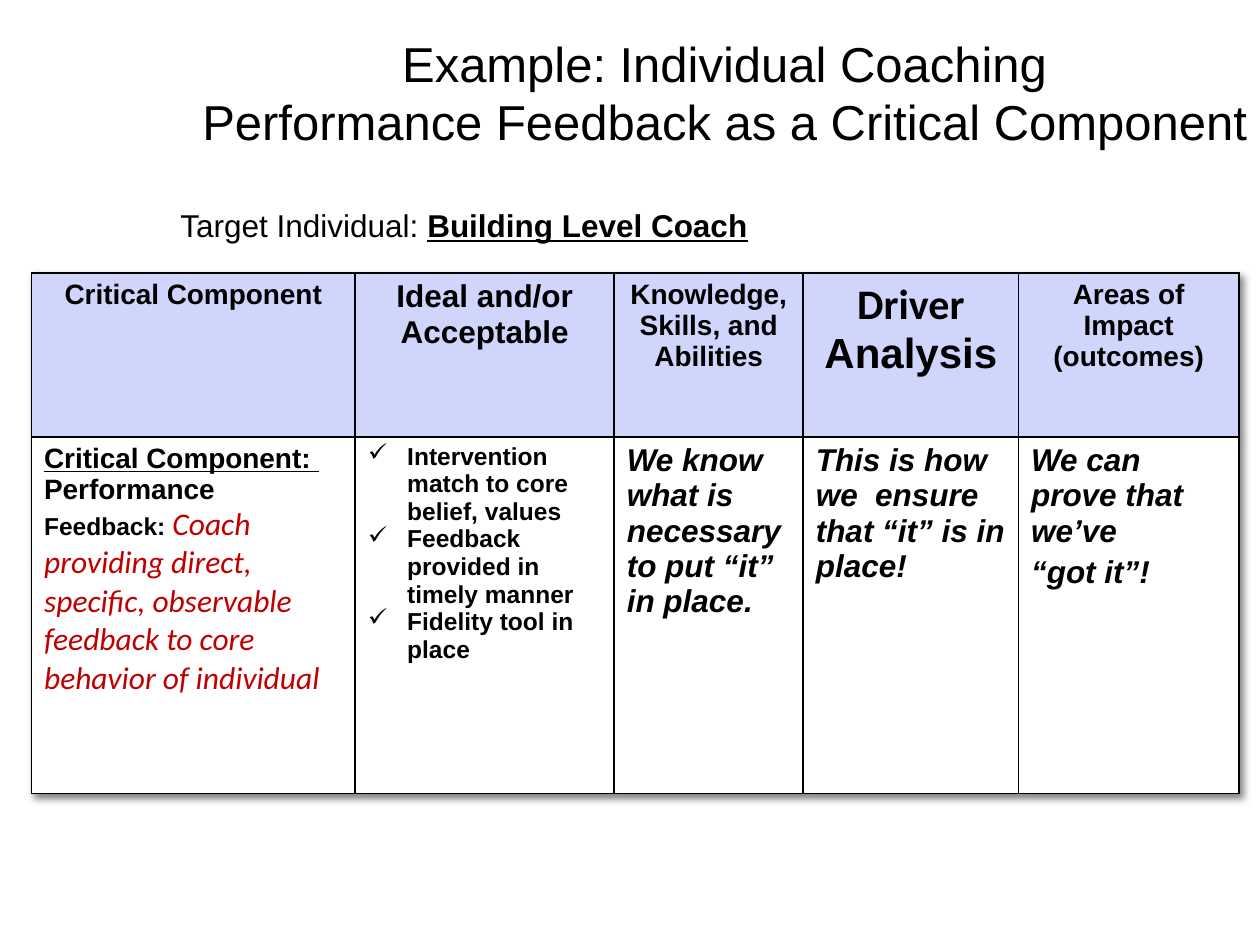
from dataclasses import dataclass

from lxml import etree
from pptx import Presentation
from pptx.dml.color import RGBColor
from pptx.enum import text as t
from pptx.oxml import ns
from pptx.util import Pt

BLACK = RGBColor(0x00, 0x00, 0x00)
WHITE = RGBColor(0xFF, 0xFF, 0xFF)
LAVENDER = RGBColor(0xD0, 0xD5, 0xFC)
RED = RGBColor(0xC0, 0x00, 0x00)

COLUMN_WIDTHS = (185, 148, 108, 123, 126)
ROW_HEIGHTS = (93.6, 203.8)


@dataclass
class Words:
    """A stretch of text in one format."""
    text: str
    size: float
    bold: bool = True
    italic: bool = False
    underline: bool = False
    face: str = "Arial"
    color: RGBColor = BLACK


HEADINGS = (
    [[Words("Critical Component", 16)]],
    [[Words("Ideal and/or Acceptable", 18)]],
    [[Words("Knowledge, Skills, and Abilities", 16)]],
    [[Words("Driver", 24, face="Calibri")], [Words("Analysis", 24)]],
    [[Words(line, 16)] for line in ("Areas of", "Impact", "(outcomes)")],
)
COMPONENT = [
    [Words("Critical Component: ", 16, underline=True)],
    [Words("Performance ", 16), Words("Feedback: ", 14),
     Words("Coach providing direct, specific, observable feedback to core "
           "behavior of individual", 18, bold=False, italic=True,
           face="Calibri", color=RED)],
]
PRACTICES = [[Words(line, 14)] for line in (
    "Intervention match to core belief, values",
    "Feedback provided in timely manner",
    "Fidelity tool in place",
)]
STATEMENTS = [[[Words(line, 18, italic=True)] for line in lines] for lines in (
    ["We know what is necessary to put “it” in place."],
    ["This is how we  ensure that “it” is in place!"],
    ["We can prove that  we’ve", "“got it”!"],
)]


def format_run(run, words):
    """Give a run the format of its words."""
    font = run.font
    font.name, font.size = words.face, Pt(words.size)
    font.bold, font.italic, font.underline = words.bold, words.italic, words.underline
    font.color.rgb = words.color


def write(frame, lines, align=t.PP_ALIGN.LEFT, before=0):
    """Fill a text frame with paragraphs of formatted words."""
    for index, line in enumerate(lines):
        paragraph = frame.add_paragraph() if index else frame.paragraphs[0]
        paragraph.alignment = align
        paragraph.space_before = Pt(before)
        for words in line:
            run = paragraph.add_run()
            run.text = words.text
            format_run(run, words)


def add_checks(frame):
    """Give each paragraph a hanging check mark."""
    for paragraph in frame.paragraphs:
        properties = paragraph._p.get_or_add_pPr()
        properties.set("marL", str(Pt(22.5)))
        properties.set("indent", str(-Pt(22.5)))
        etree.SubElement(properties, ns.qn("a:buFont"), typeface="Wingdings")
        etree.SubElement(properties, ns.qn("a:buChar"), char="ü")


def style_cell(cell, color):
    """Fill a cell and rule its four sides in black."""
    properties = cell._tc.get_or_add_tcPr()
    for side in ("lnL", "lnR", "lnT", "lnB"):
        line = etree.SubElement(properties, ns.qn("a:" + side), w=str(Pt(1)))
        paint = etree.SubElement(line, ns.qn("a:solidFill"))
        etree.SubElement(paint, ns.qn("a:srgbClr"), val=str(BLACK))
    cell.fill.solid()
    cell.fill.fore_color.rgb = color


def add_table_shadow(table):
    """Cast a soft shadow to the lower right of the table."""
    effects = etree.Element(ns.qn("a:effectLst"))
    shadow = etree.SubElement(effects, ns.qn("a:outerShdw"), blurRad=str(Pt(4)),
                              dist=str(Pt(3)), dir="2700000", algn="tl", rotWithShape="0")
    tint = etree.SubElement(shadow, ns.qn("a:srgbClr"), val=str(BLACK))
    etree.SubElement(tint, ns.qn("a:alpha"), val="50000")
    table._tbl.tblPr.insert(0, effects)


def place_title(slide, left, top, width, height):
    """Place the two-line slide title."""
    title = slide.shapes.title
    title.left, title.top = Pt(left), Pt(top)
    title.width, title.height = Pt(width), Pt(height)
    frame = title.text_frame
    frame.text = ("Example: Individual Coaching\v"
                  "Performance Feedback as a Critical Component")
    frame.auto_size = t.MSO_AUTO_SIZE.NONE
    frame.vertical_anchor = t.MSO_ANCHOR.MIDDLE
    frame.paragraphs[0].alignment = t.PP_ALIGN.CENTER
    for run in frame.paragraphs[0].runs:
        format_run(run, Words(run.text, 28, bold=False))


def place_target(slide, left, top, width, height):
    """Place the line that names the person coached."""
    target = slide.shapes.add_textbox(Pt(left), Pt(top), Pt(width), Pt(height))
    frame = target.text_frame
    frame.word_wrap = False
    frame.auto_size = t.MSO_AUTO_SIZE.SHAPE_TO_FIT_TEXT
    write(frame, [[Words("Target Individual: ", 18, bold=False),
                   Words("Building Level Coach", 18, underline=True)]])


def place_analysis(slide, left, top):
    """Place the coaching table with its headings and one component."""
    table = slide.shapes.add_table(
        len(ROW_HEIGHTS), len(COLUMN_WIDTHS), Pt(left), Pt(top),
        Pt(sum(COLUMN_WIDTHS)), Pt(sum(ROW_HEIGHTS))).table
    table.first_row = table.horz_banding = False
    add_table_shadow(table)
    for column, width in zip(table.columns, COLUMN_WIDTHS):
        column.width = Pt(width)
    for row, height, color in zip(table.rows, ROW_HEIGHTS, (LAVENDER, WHITE)):
        row.height = Pt(height)
        for cell in row.cells:
            style_cell(cell, color)
    for index, heading in enumerate(HEADINGS):
        write(table.cell(0, index).text_frame, heading, t.PP_ALIGN.CENTER)
    write(table.cell(1, 0).text_frame, COMPONENT)
    practices = table.cell(1, 1).text_frame
    write(practices, PRACTICES)
    add_checks(practices)
    for index, statement in enumerate(STATEMENTS, start=2):
        write(table.cell(1, index).text_frame, statement, before=3.6)


def main():
    """Build and save the slide."""
    deck = Presentation()
    deck.slide_width, deck.slide_height = Pt(720), Pt(540)
    slide = deck.slides.add_slide(deck.slide_layouts[5])
    place_title(slide, 108, 12, 612, 81)
    place_analysis(slide, 18, 156)
    place_target(slide, 96, 114, 342, 29)
    deck.save("out.pptx")


if __name__ == "__main__":
    main()
